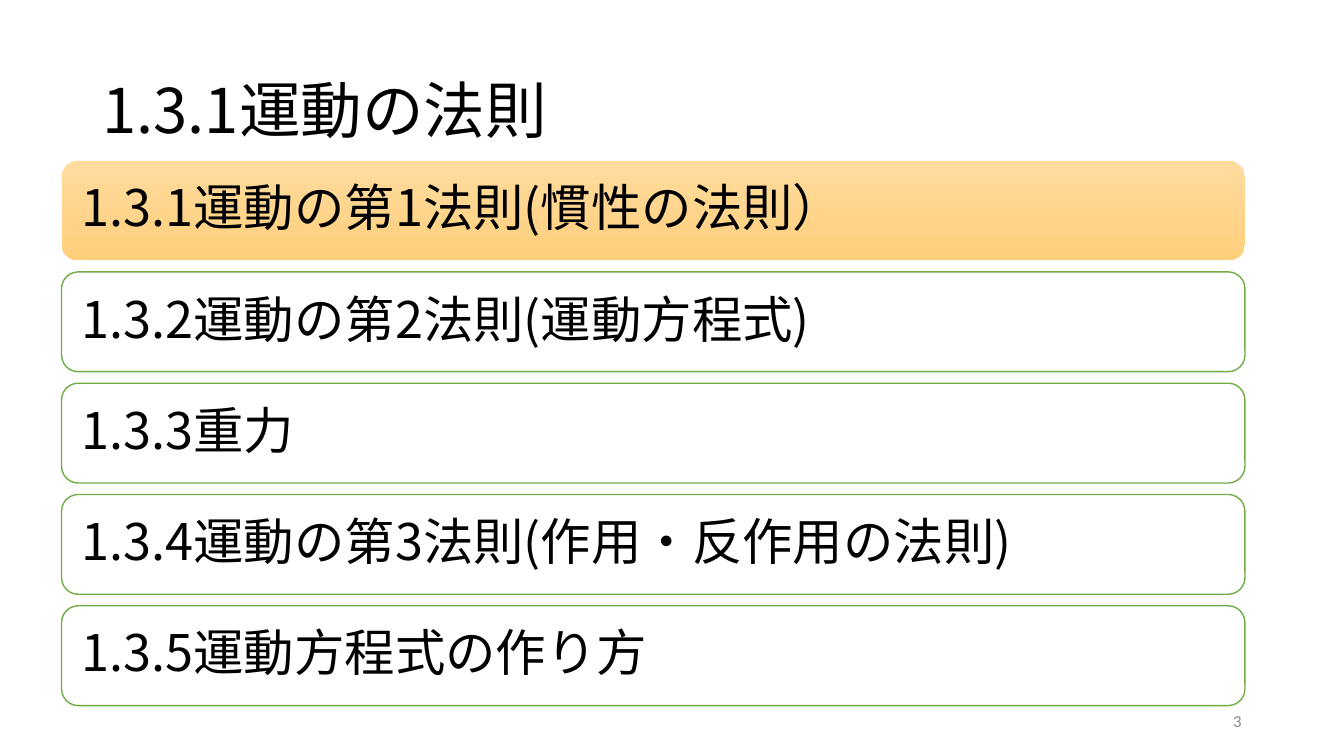
from lxml.etree import SubElement
from pptx import Presentation
from pptx.dml.color import RGBColor
from pptx.enum.shapes import MSO_SHAPE
from pptx.enum.text import MSO_ANCHOR, PP_ALIGN
from pptx.oxml.ns import qn
from pptx.util import Pt

BLACK = RGBColor(0x00, 0x00, 0x00)
WHITE = RGBColor(0xFF, 0xFF, 0xFF)
GRAY = RGBColor(0x8C, 0x8C, 0x8C)
GREEN = RGBColor(0x70, 0xAD, 0x47)
LIGHT = RGBColor(0xFF, 0xDB, 0x9E)
AMBER = RGBColor(0xFF, 0xD0, 0x7C)
SANS = "Noto Sans CJK JP"

TITLE = "1.3.1運動の法則"
TOPICS = [
    "1.3.1運動の第1法則(慣性の法則）",
    "1.3.2運動の第2法則(運動方程式)",
    "1.3.3重力",
    "1.3.4運動の第3法則(作用・反作用の法則)",
    "1.3.5運動方程式の作り方",
]
LEFT, TOP, WIDTH, HEIGHT, PITCH = 44, 114.7, 845.3, 71.3, 79.5


def write(shape, text, size, name=SANS, color=BLACK, pad=7.2,
          align=PP_ALIGN.LEFT, space=0.9):
    frame = shape.text_frame
    style = {"word_wrap": True, "vertical_anchor": MSO_ANCHOR.MIDDLE,
             "margin_left": Pt(pad), "margin_right": Pt(pad)}
    for key, value in style.items():
        setattr(frame, key, value)
    para = frame.paragraphs[0]
    para.alignment = align
    para.line_spacing = space
    run = para.add_run()
    run.text = text
    for key, value in {"size": Pt(size), "name": name}.items():
        setattr(run.font, key, value)
    run.font.color.rgb = color
    # East Asian glyphs take their typeface from a:ea
    SubElement(run.font._element, qn("a:ea"), typeface=name)


def add_text(slide, box, text, size, **style):
    shape = slide.shapes.add_textbox(*map(Pt, box))
    write(shape, text, size, **style)


def add_bar(slide, top, text, active):
    shape = slide.shapes.add_shape(
        MSO_SHAPE.ROUNDED_RECTANGLE, Pt(LEFT), Pt(top), Pt(WIDTH), Pt(HEIGHT))
    shape.shadow.inherit = False
    if active:
        shape.fill.gradient()
        shape.fill.gradient_angle = 270
        for stop, color in zip(shape.fill.gradient_stops, (LIGHT, AMBER)):
            stop.color.rgb = color
            stop.position = float(color == AMBER)
        shape.line.fill.background()
    else:
        shape.fill.solid()
        shape.fill.fore_color.rgb = WHITE
        shape.line.color.rgb = GREEN
        shape.line.width = Pt(1)
    write(shape, text, 36, pad=10.8)


def main():
    deck = Presentation()
    deck.slide_width, deck.slide_height = Pt(960), Pt(540)
    slide = deck.slides.add_slide(deck.slide_layouts[6])
    add_text(slide, (66, 28.75, 828, 104.4), TITLE, 44)
    for row, topic in enumerate(TOPICS):
        add_bar(slide, TOP + row * PITCH, topic, active=row == 0)
    add_text(slide, (678, 500.5, 216, 28.75), "3", 12, name="Calibri",
             color=GRAY, align=PP_ALIGN.RIGHT, space=1.0)
    deck.save("out.pptx")


if __name__ == "__main__":
    main()
